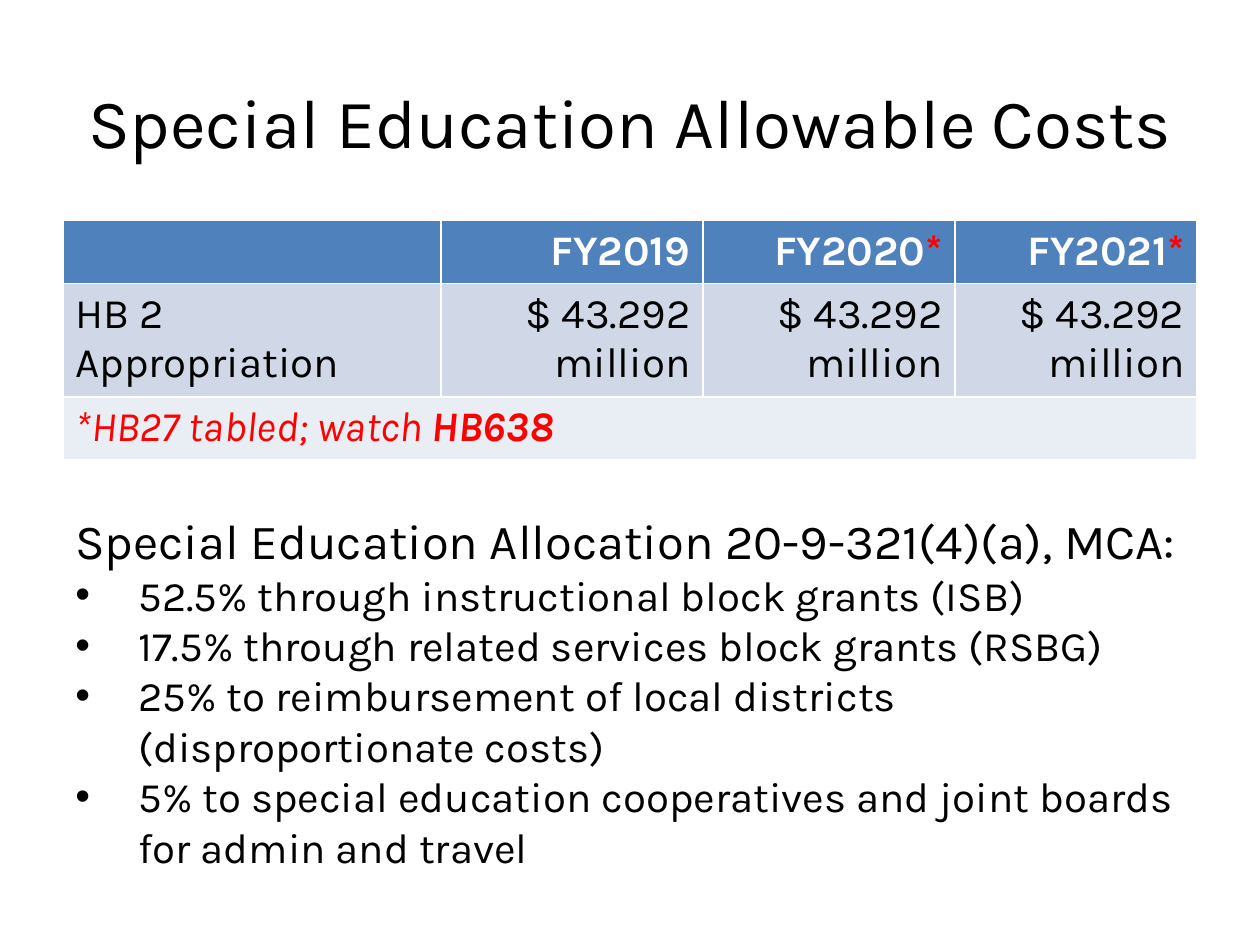
"""Build the slide on special education allowable costs."""
from lxml import etree
from pptx import Presentation
from pptx.dml.color import RGBColor
from pptx.enum.text import MSO_ANCHOR, PP_ALIGN
from pptx.oxml.ns import qn
from pptx.util import Pt

LEFT, CENTER, RIGHT = PP_ALIGN.LEFT, PP_ALIGN.CENTER, PP_ALIGN.RIGHT
TOP, MIDDLE = MSO_ANCHOR.TOP, MSO_ANCHOR.MIDDLE
FONT = "Karla"
BLACK, WHITE, RED = "000000", "FFFFFF", "FF0000"
MARGIN, WIDTH, INDENT = 36, 648, 36

TITLE = "Special Education Allowable Costs"
HEAD = {"size": 24, "bold": True, "color": WHITE}
BODY = {"size": 24, "bold": False, "color": BLACK}
STAR = ("*", HEAD | {"color": RED})
NOTE = BODY | {"color": RED, "italic": True}
COST = [("$ 43.292 million", BODY)]
ROWS = [
    ("4F81BD", [[], [("FY2019", HEAD)], [("FY2020", HEAD), STAR], [("FY2021", HEAD), STAR]]),
    ("D0D8E8", [[("HB 2 Appropriation", BODY)], COST, COST, COST]),
    ("E9EDF4", [[("*HB27 tabled; watch ", NOTE), ("HB638", NOTE | {"bold": True})], [], [], []]),
]
COLS = [216, 149.76, 144, 138.24]
ROW_H = 29.5
LEAD = "Special Education Allocation 20-9-321(4)(a), MCA:"
SHARES = [
    "52.5% through instructional block grants (ISB)",
    "17.5% through related services block grants (RSBG)",
    "25% to reimbursement of local districts (disproportionate costs)",
    "5% to special education cooperatives and joint boards for admin and travel",
]


def paint(hue):
    """Turn a hex string into a colour."""
    return RGBColor.from_string(hue)


def write(para, runs, align=LEFT):
    """Fill a paragraph with formatted runs."""
    para.alignment = align
    for text, style in runs:
        run = para.add_run()
        run.text = text
        run.font.name = FONT
        for key, value in style.items():
            if key == "color":
                run.font.color.rgb = paint(value)
            else:
                setattr(run.font, key, Pt(value) if key == "size" else value)


def add_box(slide, top, height, anchor):
    """Add a wrapping text box across the slide and return its frame."""
    box = slide.shapes.add_textbox(Pt(MARGIN), Pt(top), Pt(WIDTH), Pt(height))
    frame = box.text_frame
    frame.word_wrap = True
    frame.vertical_anchor = anchor
    return frame


def add_bullet(para):
    """Give a paragraph a hanging bullet."""
    props = para._p.get_or_add_pPr()
    props.set("marL", str(Pt(INDENT)))
    props.set("indent", str(Pt(-INDENT)))
    etree.SubElement(props, qn("a:buFont")).set("typeface", "Arial")
    etree.SubElement(props, qn("a:buChar")).set("char", "•")


def add_costs(slide):
    """Add the table of appropriations."""
    shape = slide.shapes.add_table(len(ROWS), len(COLS), Pt(MARGIN), Pt(126),
                                   Pt(WIDTH), Pt(ROW_H * len(ROWS)))
    table = shape.table
    for col, width in zip(table.columns, COLS):
        col.width = Pt(width)
    for r, (hue, cells) in enumerate(ROWS):
        for c, runs in enumerate(cells):
            cell = table.cell(r, c)
            cell.fill.solid()
            cell.fill.fore_color.rgb = paint(hue)
            write(cell.text_frame.paragraphs[0], runs, RIGHT if c else LEFT)
    last = len(ROWS) - 1
    table.cell(last, 0).merge(table.cell(last, len(COLS) - 1))


def main():
    """Build and save the slide."""
    deck = Presentation()
    deck.slide_width, deck.slide_height = Pt(720), Pt(540)
    slide = deck.slides.add_slide(deck.slide_layouts[6])
    title = add_box(slide, 24, 90, MIDDLE)
    write(title.paragraphs[0], [(TITLE, {"size": 39.6, "color": BLACK})], CENTER)
    add_costs(slide)
    frame = add_box(slide, 288, 216, TOP)
    write(frame.paragraphs[0], [(LEAD, BODY | {"size": 28})])
    for share in SHARES:
        para = frame.add_paragraph()
        write(para, [(share, BODY)])
        add_bullet(para)
    deck.save("out.pptx")


if __name__ == "__main__":
    main()
